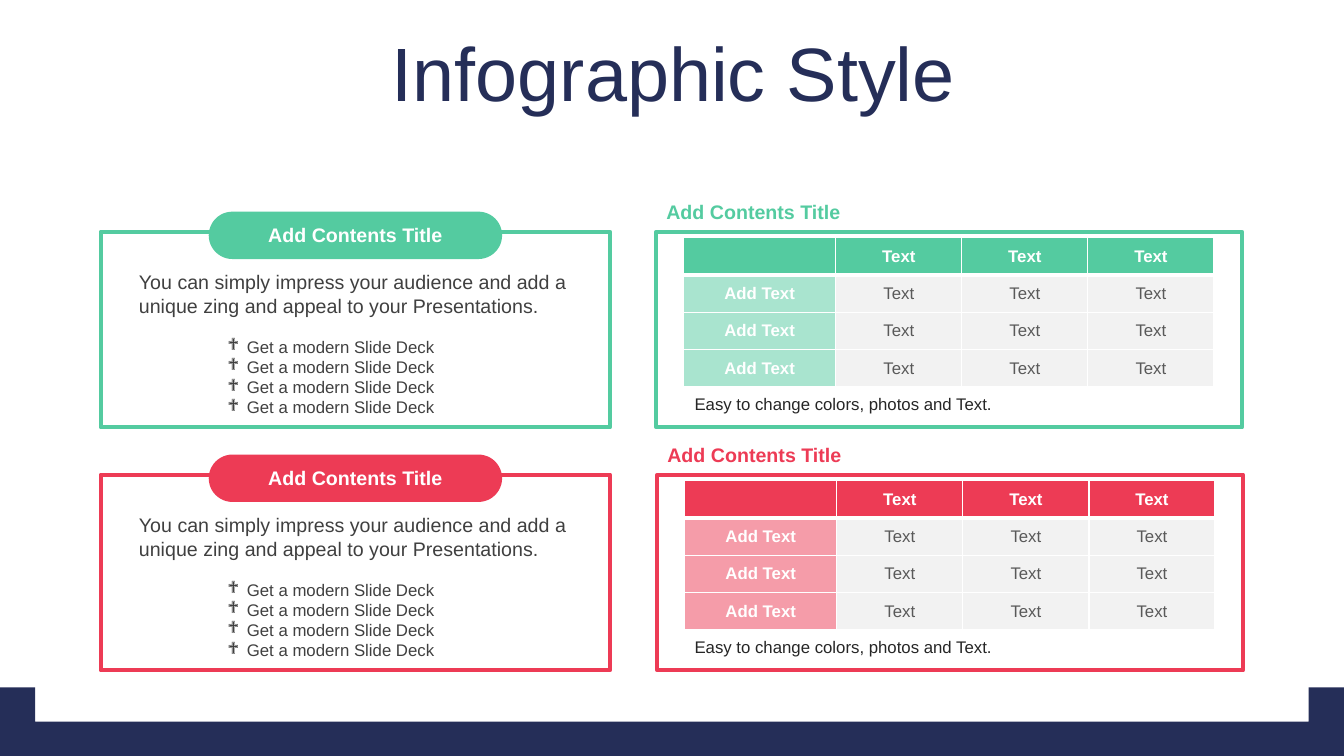
from dataclasses import dataclass
from typing import Any

from lxml import etree
from pptx import Presentation
from pptx.dml.color import RGBColor
from pptx.enum.shapes import MSO_SHAPE
from pptx.enum.text import MSO_ANCHOR, MSO_AUTO_SIZE, PP_ALIGN
from pptx.oxml.ns import qn
from pptx.util import Inches, Pt

NAVY = RGBColor(0x25, 0x2E, 0x58)
GREEN = RGBColor(0x54, 0xCB, 0xA0)
RED = RGBColor(0xED, 0x3B, 0x55)
WHITE = RGBColor(0xFF, 0xFF, 0xFF)
PALE = RGBColor(0xF2, 0xF2, 0xF2)
INK = RGBColor(0x26, 0x26, 0x26)
DARK = RGBColor(0x40, 0x40, 0x40)
GRAY = RGBColor(0x59, 0x59, 0x59)

RECT = MSO_SHAPE.RECTANGLE
ROUND = MSO_SHAPE.ROUNDED_RECTANGLE
CENTER, LEFT = PP_ALIGN.CENTER, PP_ALIGN.LEFT
MIDDLE = MSO_ANCHOR.MIDDLE
GROW = MSO_AUTO_SIZE.SHAPE_TO_FIT_TEXT

FONT = "Arial"
TITLE = {"name": FONT, "size": Pt(54)}
HEAD = {"name": FONT, "size": Pt(14), "bold": True}
BODY = {"name": FONT, "size": Pt(14)}
SMALL = {"name": FONT, "size": Pt(12)}
STRONG = {**SMALL, "bold": True}

LABEL = "Add Contents Title"
BLURB = ("You can simply impress your audience and add a unique zing "
         "and appeal to your Presentations.")
POINT = "Get a modern Slide Deck"
NOTE = "Easy to change colors, photos and Text."
GRID = [["", "Text", "Text", "Text"]] + [["Add Text", "Text", "Text", "Text"]] * 3
WIDTHS = [1.51, 1.25, 1.25, 1.25]
ROW = 0.37
INDENT = Inches(0.19)


@dataclass(frozen=True)
class Band:
    """One row of the slide: a card on the left and a table on the right."""
    color: RGBColor
    top: float
    right: float


BANDS = [Band(RED, 4.71, 6.52), Band(GREEN, 2.3, 6.51)]


def write(para: Any, text: str, style: dict[str, Any], color: RGBColor,
          align: PP_ALIGN = LEFT) -> None:
    para.alignment = align
    run = para.add_run()
    run.text = text
    for key, value in style.items():
        setattr(run.font, key, value)
    run.font.color.rgb = color


def add_text(shapes: Any, box: tuple[float, ...], lines: list[str],
             style: dict[str, Any], color: RGBColor,
             align: PP_ALIGN = LEFT) -> Any:
    frame = shapes.add_textbox(*map(Inches, box)).text_frame
    frame.word_wrap = True
    frame.auto_size = GROW
    for i, line in enumerate(lines):
        para = frame.add_paragraph() if i else frame.paragraphs[0]
        write(para, line, style, color, align)
    return frame


def add_box(shapes: Any, kind: MSO_SHAPE, box: tuple[float, ...],
            fill: RGBColor, edge: RGBColor | None = None) -> Any:
    shape = shapes.add_shape(kind, *map(Inches, box))
    shape.shadow.inherit = False
    shape.fill.solid()
    shape.fill.fore_color.rgb = fill
    if edge is None:
        shape.line.fill.background()
    else:
        shape.line.color.rgb = edge
        shape.line.width = Pt(3)
    return shape


def add_points(shapes: Any, box: tuple[float, ...], count: int) -> None:
    """Add a list with diamond bullets."""
    frame = add_text(shapes, box, [POINT] * count, SMALL, DARK)
    for para in frame.paragraphs:
        props = para._p.get_or_add_pPr()
        props.set("marL", str(INDENT))
        props.set("indent", str(-INDENT))
        etree.SubElement(props, qn("a:buFont"), typeface="Wingdings")
        etree.SubElement(props, qn("a:buChar"), char="❖")


def edge_cell(cell: Any, header: bool) -> None:
    """Give a cell white borders, thicker below the header."""
    props = cell._tc.get_or_add_tcPr()
    for side in "LRTB":
        width = Pt(3 if header and side == "B" else 1)
        line = etree.SubElement(props, qn(f"a:ln{side}"), w=str(width))
        fill = etree.SubElement(line, qn("a:solidFill"))
        etree.SubElement(fill, qn("a:srgbClr"), val=str(WHITE))


def fill_cell(cell: Any, color: RGBColor, faded: bool) -> None:
    cell.fill.solid()
    cell.fill.fore_color.rgb = color
    if faded:
        tint = cell._tc.tcPr.find(f"{qn('a:solidFill')}/{qn('a:srgbClr')}")
        etree.SubElement(tint, qn("a:alpha"), val="50000")


def add_grid(shapes: Any, left: float, top: float, color: RGBColor) -> None:
    size = (sum(WIDTHS), ROW * len(GRID))
    table = shapes.add_table(len(GRID), len(WIDTHS),
                             *map(Inches, (left, top, *size))).table
    table.first_row = table.horz_banding = False
    for col, width in zip(table.columns, WIDTHS):
        col.width = Inches(width)
    for r, texts in enumerate(GRID):
        table.rows[r].height = Inches(ROW)
        for c, text in enumerate(texts):
            cell = table.cell(r, c)
            cell.vertical_anchor = MIDDLE
            tinted = r == 0 or c == 0
            edge_cell(cell, r == 0)
            fill_cell(cell, color if tinted else PALE, c == 0 and r > 0)
            para = cell.text_frame.paragraphs[0]
            if text:
                write(para, text, STRONG if tinted else SMALL,
                      WHITE if tinted else GRAY, CENTER)
            else:
                etree.SubElement(para._p, qn("a:endParaRPr"), sz="1200")


def add_card(shapes: Any, band: Band) -> None:
    top = band.top
    add_box(shapes, RECT, (1, top, 5.05, 1.94), WHITE, band.color)
    pill = add_box(shapes, ROUND, (2.07, top - 0.2, 2.91, 0.47), band.color)
    pill.adjustments[0] = 0.5
    add_text(shapes, (1.28, top + 0.33, 4.5, 0.57), [BLURB], BODY, DARK)
    add_points(shapes, (2.16, top + 0.99, 2.75, 0.91), 4)
    add_text(shapes, (2.23, top - 0.14, 2.59, 0.34), [LABEL], HEAD, WHITE, CENTER)


def add_panel(shapes: Any, band: Band) -> None:
    """Add the framed table with its heading and note."""
    left, top = band.right, band.top
    add_box(shapes, RECT, (left, top, 5.81, 1.94), WHITE, band.color)
    add_grid(shapes, left + 0.27, top + 0.06, band.color)
    add_text(shapes, (6.79, top + 1.56, 4.23, 0.3), [NOTE], SMALL, INK)
    add_text(shapes, (left, top - 0.37, 2.75, 0.34), [LABEL], HEAD, band.color)


def add_base(shapes: Any) -> None:
    """Add the navy tray along the foot of the slide."""
    edge = [(0, 6.82), (0.35, 6.82), (0.35, 7.16), (12.98, 7.16),
            (12.98, 6.82), (13.34, 6.82), (13.34, 7.5), (0, 7.5)]
    start, *rest = [(Inches(x), Inches(y)) for x, y in edge]
    pen = shapes.build_freeform(*start)
    pen.add_line_segments(rest)
    tray = pen.convert_to_shape()
    tray.shadow.inherit = False
    tray.fill.solid()
    tray.fill.fore_color.rgb = NAVY
    tray.line.fill.background()


def main() -> None:
    deck = Presentation()
    deck.slide_width, deck.slide_height = Inches(13.33), Inches(7.5)
    shapes = deck.slides.add_slide(deck.slide_layouts[6]).shapes
    add_base(shapes)
    title = add_text(shapes, (0.35, 0.37, 12.66, 0.79), ["Infographic Style"],
                     TITLE, NAVY, CENTER)
    title.auto_size = MSO_AUTO_SIZE.NONE
    title.vertical_anchor = MIDDLE
    title.paragraphs[0].line_spacing = 0.9
    for band in BANDS:
        add_card(shapes, band)
        add_panel(shapes, band)
    deck.save("out.pptx")


if __name__ == "__main__":
    main()
